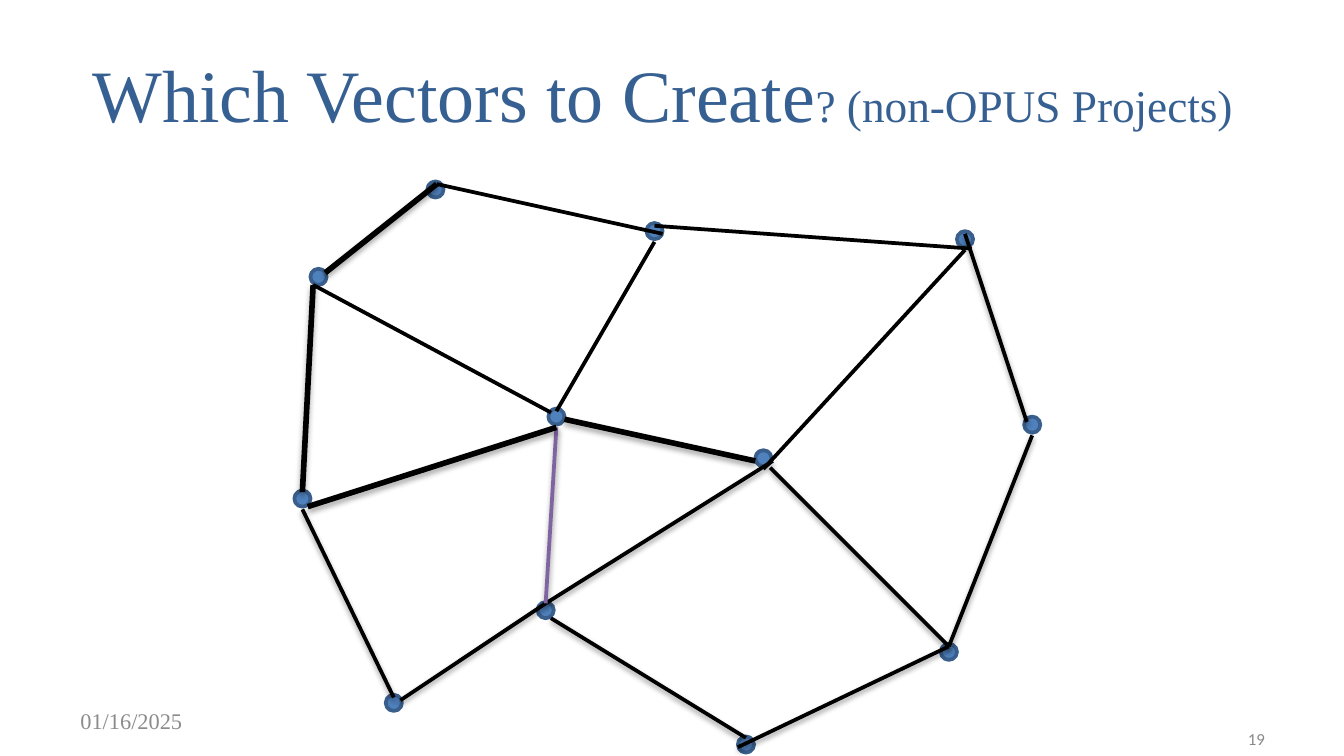
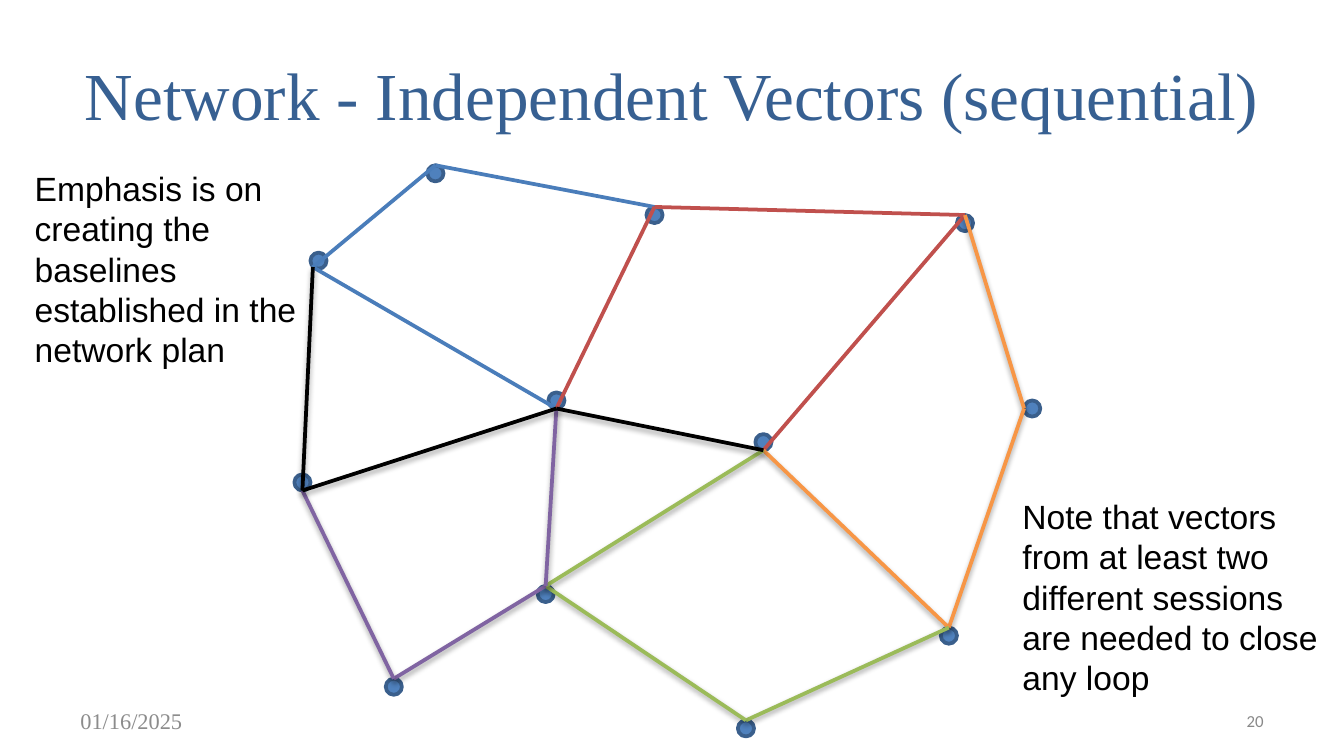
from lxml import etree
from pptx import Presentation
from pptx.dml.color import RGBColor
from pptx.enum import shapes, text
from pptx.oxml.ns import qn
from pptx.util import Inches, Pt

BLACK = RGBColor(0x00, 0x00, 0x00)
NAVY = RGBColor(0x37, 0x60, 0x92)
DOT_FILL = RGBColor(0x4F, 0x81, 0xBD)
DOT_LINE = RGBColor(0x3A, 0x5F, 0x8C)
BLUE = RGBColor(0x4A, 0x7D, 0xBA)
RED = RGBColor(0xC0, 0x50, 0x4D)
ORANGE = RGBColor(0xF7, 0x96, 0x46)
GREEN = RGBColor(0x9B, 0xBB, 0x59)
PURPLE = RGBColor(0x80, 0x64, 0xA2)
DATE_GREY = RGBColor(0x8C, 0x8C, 0x8C)
NUMBER_GREY = RGBColor(0x89, 0x89, 0x89)
SERIF, SANS, NUMBER_FONT = "Times New Roman", "Arial", "Calibri"

DATE = "01/16/2025"
DOT = 0.12          # station diameter
PLAN_SHIFT = -0.12  # the second network sits this much higher

# Top left of each station on the first slide
STATIONS = {
    "A": (3.18, 1.35), "F": (5.49, 5.48), "J": (2.31, 2.0), "D": (7.62, 3.1),
    "K": (4.08, 3.04), "H": (2.87, 5.17), "E": (7.0, 4.79), "C": (7.12, 1.72),
    "L": (5.62, 3.35), "G": (4.0, 4.48), "I": (2.19, 3.65), "B": (4.81, 1.66),
}

# Vectors of the first slide: from, to, colour, width, shadow opacity
CANDIDATES = [
    ((3.25, 1.37), (2.42, 2.03), BLACK, 3, 35),
    ((2.33, 2.12), (4.1, 3.07), BLACK, 2, 0),
    ((3.25, 1.37), (4.93, 1.74), BLACK, 2, 0),
    ((4.14, 3.06), (4.87, 1.8), BLACK, 2, 0),
    ((4.87, 1.68), (7.23, 1.85), BLACK, 2, 0),
    ((7.18, 1.86), (5.68, 3.49), BLACK, 2, 0),
    ((7.18, 1.74), (7.64, 3.14), BLACK, 2, 38),
    ((7.68, 3.24), (7.06, 4.81), BLACK, 2, 38),
    ((7.06, 4.81), (5.49, 5.56), BLACK, 2, 38),
    ((5.55, 5.49), (4.1, 4.6), BLACK, 2, 38),
    ((4.06, 4.49), (5.75, 3.43), BLACK, 2, 38),
    ((4.06, 4.49), (2.98, 5.21), BLACK, 2, 38),
    ((2.93, 5.19), (2.25, 3.79), BLACK, 2, 38),
    ((4.06, 4.49), (4.14, 3.18), PURPLE, 2, 38),
    ((7.06, 4.81), (5.73, 3.48), BLACK, 2, 38),
    ((5.62, 3.43), (4.2, 3.12), BLACK, 3, 35),
    ((4.14, 3.18), (2.29, 3.77), BLACK, 3, 35),
    ((2.25, 3.66), (2.33, 2.12), BLACK, 3, 35),
]

# Sessions of the second slide: colour, shadow opacity, station pairs
SESSIONS = [
    (BLUE, 0, "AJ JK AB"),
    (RED, 0, "KB BC CL"),
    (ORANGE, 37, "CD DE EL"),
    (GREEN, 37, "EF FG GL"),
    (PURPLE, 37, "GH HI GK"),
    (BLACK, 35, "LK KI IJ"),
]
# Where vectors meet a station, as a share of its size; the rest meet at the top
TOP, BOTTOM = (0.5, 0), (0.5, 1)
ANCHORS = {"D": (0, 0.5), "J": (0.15, 0.9), "I": BOTTOM, "K": BOTTOM, "L": BOTTOM}

NOTES = [
    ("Note that vectors from at least two different sessions are needed "
     "to close any loop", (7.51, 3.64, 2.46, 1.62)),
    ("Emphasis is on creating the baselines established in the network plan",
     (0.16, 1.2, 2.25, 1.62)),
]


def style(r, size, font, color):
    r.font.size, r.font.name = Pt(size), font
    r.font.color.rgb = color


def add_title(s, box, runs):
    sp = s.shapes.title
    sp.left, sp.top, sp.width, sp.height = map(Inches, box)
    tf = sp.text_frame
    tf.word_wrap, tf.auto_size = True, text.MSO_AUTO_SIZE.NONE
    tf.vertical_anchor = text.MSO_ANCHOR.MIDDLE
    p = tf.paragraphs[0]
    p.alignment = text.PP_ALIGN.CENTER
    for words, size in runs:
        r = p.add_run()
        r.text = words
        style(r, size, SERIF, NAVY)


def add_text(s, words, box, size, font, color, anchor=text.MSO_ANCHOR.TOP,
             align=text.PP_ALIGN.LEFT):
    tf = s.shapes.add_textbox(*map(Inches, box)).text_frame
    tf.word_wrap, tf.vertical_anchor = True, anchor
    tf.text = words
    p = tf.paragraphs[0]
    p.alignment = align
    style(p.runs[0], size, font, color)


def add_footer(s, number, left, top):
    middle = text.MSO_ANCHOR.MIDDLE
    add_text(s, DATE, (0.5, 5.21, 2.33, 0.3), 12, SERIF, DATE_GREY, middle)
    add_text(s, number, (left, top, 2.33, 0.3), 9, NUMBER_FONT, NUMBER_GREY,
             middle, text.PP_ALIGN.RIGHT)


def add_stations(s, shift=0):
    for x, y in STATIONS.values():
        sp = s.shapes.add_shape(shapes.MSO_SHAPE.OVAL, Inches(x), Inches(y + shift),
                                Inches(DOT), Inches(DOT))
        sp.shadow.inherit = False
        sp.fill.solid()
        sp.fill.fore_color.rgb = DOT_FILL
        sp.line.color.rgb, sp.line.width = DOT_LINE, Pt(2)


def add_vector(parent, start, end, color, width, opacity):
    line = parent.add_connector(shapes.MSO_CONNECTOR.STRAIGHT,
                                *map(Inches, (*start, *end)))
    line.line.color.rgb, line.line.width = color, Pt(width)
    effects = etree.SubElement(line._element.spPr, qn("a:effectLst"))
    if opacity:
        distance = 1.8 if opacity == 35 else 1.6
        shadow = etree.SubElement(effects, qn("a:outerShdw"), blurRad=str(Pt(3.1)),
                                  dist=str(Pt(distance)), dir="5400000",
                                  rotWithShape="0")
        black = etree.SubElement(shadow, qn("a:srgbClr"), val=str(BLACK))
        etree.SubElement(black, qn("a:alpha"), val=str(opacity * 1000))


def anchor_point(name):
    x, y = STATIONS[name]
    fx, fy = ANCHORS.get(name, TOP)
    return x + fx * DOT, y + PLAN_SHIFT + fy * DOT


def main():
    prs = Presentation()
    prs.slide_width = Inches(10)
    prs.slide_height = prs.slide_width * 9 // 16
    layout = prs.slide_layouts[5]

    # Candidate vectors
    s = prs.slides.add_slide(layout)
    add_title(s, (0.12, 0.22, 9.62, 0.94),
              [("Which Vectors to Create", 39.6), ("? (non-OPUS Projects)", 24.3)])
    add_stations(s)
    group = s.shapes.add_group_shape()
    for vector in CANDIDATES:
        add_vector(group.shapes, *vector)
    add_footer(s, "19", 7.18, 5.35)

    # Independent vectors, coloured by session
    s = prs.slides.add_slide(layout)
    add_title(s, (0, 0.23, 10, 0.94),
              [("Network - Independent Vectors (sequential)", 36)])
    add_stations(s, PLAN_SHIFT)
    for color, opacity, pairs in SESSIONS:
        for start, end in pairs.split():
            add_vector(s.shapes, anchor_point(start), anchor_point(end),
                       color, 2, opacity)
    add_footer(s, "20", 7.17, 5.21)
    for words, box in NOTES:
        add_text(s, words, box, 18, SANS, BLACK)

    prs.save("out.pptx")


if __name__ == "__main__":
    main()
